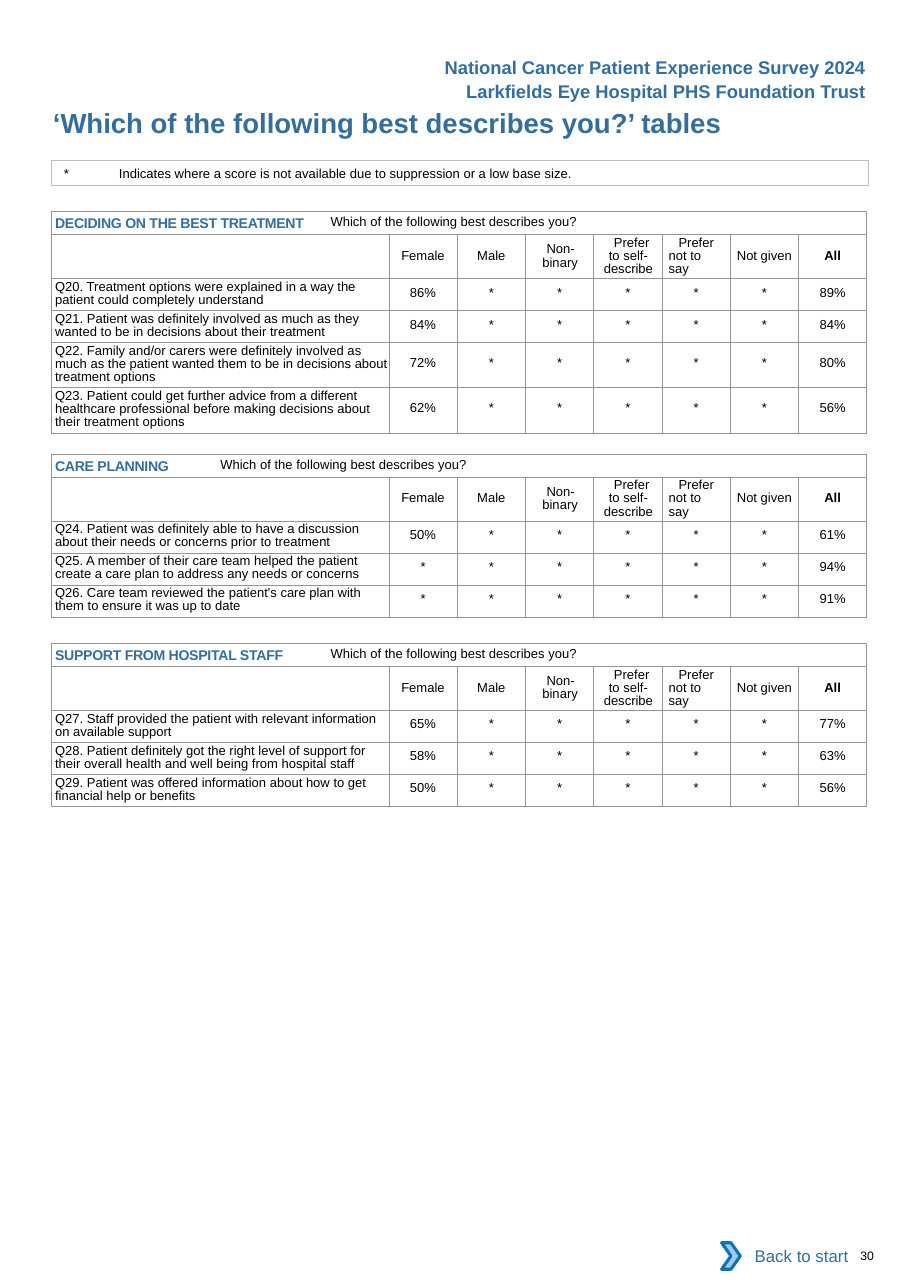
import pptx
import pptx.dml.color
import pptx.enum.shapes
import pptx.enum.text
import pptx.oxml
import pptx.oxml.ns
import pptx.util
from pptx.util import Inches

ALIGN = pptx.enum.text.PP_ALIGN
ANCHOR = pptx.enum.text.MSO_ANCHOR
SHAPE = pptx.enum.shapes.MSO_SHAPE

COLORS = {"blue": "336E9F", "black": "000000", "white": "FFFFFF", "grid": "939598",
          "note": "BFBFBF", "arrow": "A8C7E9", "arrow line": "0A74BB"}
LEFT = 0.47
LABEL_WIDTH, VALUE_WIDTH = 3.06, 0.62
TITLE_ROW, HEADER_ROW, TWO_LINES, THREE_LINES = 0.21, 0.4, 0.29, 0.41

# Header text, then left, first-line and right indents
GROUPS = [
    ("Female", 0, 0, 0),
    ("Male", 0, 0, 0),
    ("Non- binary", 0.14, 0.01, 0.13),
    ("Prefer to self- describe", 0.08, 0.06, 0.07),
    ("Prefer not to say", 0.06, 0.09, 0.1),
    ("Not given", 0, 0, 0),
    ("All", 0, 0, 0),
]

# Top, section title, then rows of question, Female score, All score, row height
SECTIONS = [
    (1.92, "DECIDING ON THE BEST TREATMENT", [
        ("Q20. Treatment options were explained in a way the patient could completely understand",
         "86%", "89%", TWO_LINES),
        ("Q21. Patient was definitely involved as much as they wanted to be in decisions about "
         "their treatment", "84%", "84%", TWO_LINES),
        ("Q22. Family and/or carers were definitely involved as much as the patient wanted them "
         "to be in decisions about treatment options", "72%", "80%", THREE_LINES),
        ("Q23. Patient could get further advice from a different healthcare professional before "
         "making decisions about their treatment options", "62%", "56%", THREE_LINES),
    ]),
    (4.12, "CARE PLANNING", [
        ("Q24. Patient was definitely able to have a discussion about their needs or concerns "
         "prior to treatment", "50%", "61%", TWO_LINES),
        ("Q25. A member of their care team helped the patient create a care plan to address any "
         "needs or concerns", "*", "94%", TWO_LINES),
        ("Q26. Care team reviewed the patient's care plan with them to ensure it was up to date",
         "*", "91%", TWO_LINES),
    ]),
    (5.84, "SUPPORT FROM HOSPITAL STAFF", [
        ("Q27. Staff provided the patient with relevant information on available support",
         "65%", "77%", TWO_LINES),
        ("Q28. Patient definitely got the right level of support for their overall health and "
         "well being from hospital staff", "58%", "63%", TWO_LINES),
        ("Q29. Patient was offered information about how to get financial help or benefits",
         "50%", "56%", TWO_LINES),
    ]),
]


def rgb(name):
    return pptx.dml.color.RGBColor.from_string(COLORS[name])


def style_font(font, size, color="black", bold=False):
    font.name = "Arial"
    font.size = pptx.util.Pt(size)
    font.bold = bold
    font.color.rgb = rgb(color)


def set_indents(para, left, first=0, right=0):
    properties = para._p.get_or_add_pPr()
    for name, value in (("marL", left), ("marR", right), ("indent", first)):
        properties.set(name, str(Inches(value)))


def add_tab_stop(para, position):
    namespace = pptx.oxml.ns.nsdecls("a")
    para._p.get_or_add_pPr().append(pptx.oxml.parse_xml(
        f'<a:tabLst {namespace}><a:tab pos="{Inches(position)}" algn="l"/></a:tabLst>'))


def set_margins(holder, left=0, top=0, right=0, bottom=0):
    holder.margin_left, holder.margin_top = Inches(left), Inches(top)
    holder.margin_right, holder.margin_bottom = Inches(right), Inches(bottom)


def write(frame, text, size, color="black", bold=False, align=ALIGN.LEFT):
    frame.word_wrap = True
    para = frame.paragraphs[0]
    para.text = text
    para.alignment = align
    style_font(para.font, size, color, bold)
    return para


def add_text(page, bounds, text, size, color="black", bold=False, align=ALIGN.LEFT, side=0):
    box = page.shapes.add_textbox(*map(Inches, bounds))
    set_margins(box.text_frame, left=side, right=side)
    write(box.text_frame, text, size, color, bold, align)


def add_shape(shapes, kind, bounds, fill=None, line=None, weight=0.5):
    shape = shapes.add_shape(kind, *map(Inches, bounds))
    shape.shadow.inherit = False
    if fill:
        shape.fill.solid()
        shape.fill.fore_color.rgb = rgb(fill)
    else:
        shape.fill.background()
    if line:
        shape.line.color.rgb = rgb(line)
        shape.line.width = pptx.util.Pt(weight)
    else:
        shape.line.fill.background()
    return shape


def format_cell(cell):
    """Give the cell no margins, thin grid borders and no fill."""
    set_margins(cell)
    namespace = pptx.oxml.ns.nsdecls("a")
    for side in ("lnL", "lnR", "lnT", "lnB"):
        cell._tc.get_or_add_tcPr().append(pptx.oxml.parse_xml(
            f'<a:{side} {namespace} w="6350"><a:solidFill>'
            f'<a:srgbClr val="{COLORS["grid"]}"/></a:solidFill></a:{side}>'))
    cell.fill.background()


def write_section_title(cell, title):
    cell.vertical_anchor = ANCHOR.MIDDLE
    para = cell.text_frame.paragraphs[0]
    set_indents(para, 0.03)
    add_tab_stop(para, 4.24)
    para.line_spacing = pptx.util.Pt(11.8)
    heading = para.add_run()
    heading.text = title + "\t"
    style_font(heading.font, 15.8, "blue", True)
    properties = heading._r.get_or_add_rPr()
    properties.set("baseline", "-8000")
    properties.set("spc", "-15")
    question = para.add_run()
    question.text = "Which of the following best describes you?"
    style_font(question.font, 8.5)


def write_group_header(cell, text, left, first, right):
    cell.vertical_anchor = ANCHOR.MIDDLE
    align = ALIGN.LEFT if text == "Prefer not to say" else ALIGN.CENTER
    para = write(cell.text_frame, text, 8.5, bold=text == "All", align=align)
    set_indents(para, left, first, right)
    para.line_spacing = pptx.util.Pt(8.6)


def write_scores(table, row, question, female, overall, height):
    label = table.cell(row, 0)
    label.margin_top = Inches(0.02)
    para = write(label.text_frame, question, 8.5)
    set_indents(para, 0.03)
    para.line_spacing = pptx.util.Pt(8.6)
    hidden = ["*"] * (len(GROUPS) - 2)
    for column, score in enumerate([female, *hidden, overall], 1):
        cell = table.cell(row, column)
        cell.margin_top = Inches(0.06 if height == TWO_LINES else 0.12)
        write(cell.text_frame, score, 8.5, align=ALIGN.CENTER)


def add_section(page, top, title, questions):
    heights = [TITLE_ROW, HEADER_ROW] + [question[-1] for question in questions]
    widths = [LABEL_WIDTH] + [VALUE_WIDTH] * len(GROUPS)
    table = page.shapes.add_table(
        len(heights), len(widths), Inches(LEFT), Inches(top),
        Inches(sum(widths)), Inches(sum(heights))).table
    table.first_row = table.horz_banding = False
    for column, width in zip(table.columns, widths):
        column.width = Inches(width)
    for row, height in zip(table.rows, heights):
        row.height = Inches(height)
    for cell in table.iter_cells():
        format_cell(cell)
    table.cell(0, 0).merge(table.cell(0, len(GROUPS)))
    write_section_title(table.cell(0, 0), title)
    for column, group in enumerate(GROUPS, 1):
        write_group_header(table.cell(1, column), *group)
    for row, question in enumerate(questions, 2):
        write_scores(table, row, *question)


def set_title(page, text):
    title = page.shapes.title
    title.left, title.top = Inches(LEFT), Inches(0.96)
    title.width, title.height = Inches(6.25), Inches(0.3)
    frame = title.text_frame
    set_margins(frame)
    frame.auto_size = pptx.enum.text.MSO_AUTO_SIZE.NONE
    frame.vertical_anchor = ANCHOR.TOP
    set_indents(write(frame, text, 18, "blue", True), 0.01)


def add_note(page):
    note = add_shape(page.shapes, SHAPE.RECTANGLE, (LEFT, 1.46, 7.41, 0.22), line="note")
    set_margins(note.text_frame)
    note.text_frame.vertical_anchor = ANCHOR.MIDDLE
    text = "*\tIndicates where a score is not available due to suppression or a low base size."
    para = write(note.text_frame, text, 8.5)
    set_indents(para, 0.11)
    properties = para._p.get_or_add_pPr()
    add_tab_stop(para, 0.34)
    properties.append(properties.find(pptx.oxml.ns.qn("a:defRPr")))


def add_back_button(page):
    group = page.shapes.add_group_shape()
    button = add_shape(group.shapes, SHAPE.RECTANGLE, (6.62, 11.19, 1.18, 0.42), fill="white")
    button.text_frame.vertical_anchor = ANCHOR.MIDDLE
    write(button.text_frame, "Back to start", 11, "blue", align=ALIGN.RIGHT)
    add_shape(group.shapes, SHAPE.CHEVRON, (6.55, 11.28, 0.17, 0.24),
              "arrow", "arrow line", 2)


def main():
    deck = pptx.Presentation()
    deck.slide_width, deck.slide_height = Inches(8.26), Inches(11.69)
    page = deck.slides.add_slide(deck.slide_layouts.get_by_name("Title Only"))
    set_title(page, "‘Which of the following best describes you?’ tables")
    for top, line in ((0.51, "National Cancer Patient Experience Survey 2024"),
                      (0.73, "Larkfields Eye Hospital PHS Foundation Trust")):
        add_text(page, (3.5, top, 4.46, 0.2), line, 12, "blue", True, ALIGN.RIGHT, side=0.1)
    add_note(page)
    for section in SECTIONS:
        add_section(page, *section)
    add_text(page, (7.81, 11.33, 0.4, 0.13), "30", 8)
    add_back_button(page)
    deck.save("out.pptx")


if __name__ == "__main__":
    main()
